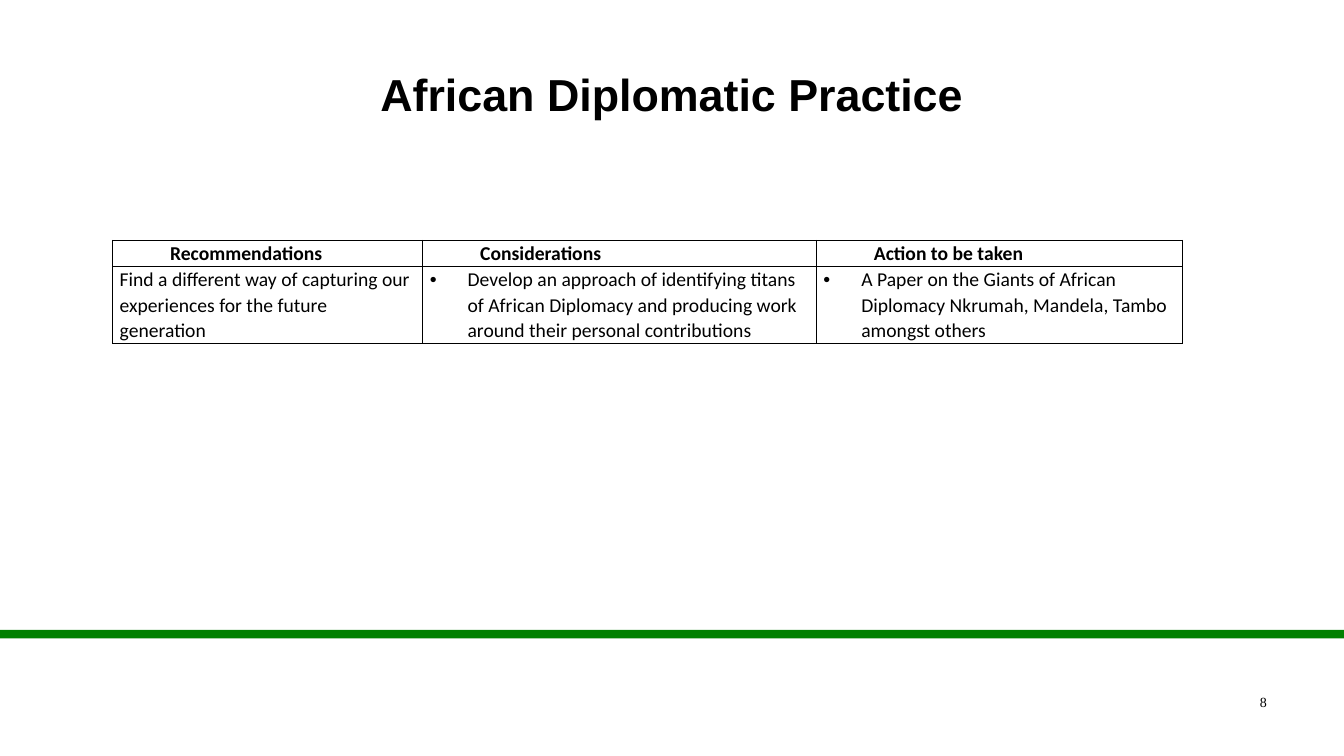
from lxml import etree
from pptx import Presentation
from pptx.dml.color import RGBColor
from pptx.enum import shapes, text
from pptx.oxml import ns
from pptx.util import Pt

TITLE = "African Diplomatic Practice"
PAGE_NUMBER = "8"
HEADERS = ["Recommendations", "Considerations", "Action to be taken"]
ACTIONS = [
    "Find a different way of capturing our experiences for the future generation",
    "Develop an approach of identifying titans of African Diplomacy and producing work "
    "around their personal contributions",
    "A Paper on the Giants of African Diplomacy Nkrumah, Mandela, Tambo amongst others",
]
COLORS = {"ink": "000000", "band": "008000"}
COLUMN_WIDTHS = [221.5, 281.25, 261.25]
ROW_HEIGHTS = [18.4, 55]
SLIDE_WIDTH, SLIDE_HEIGHT = 960, 540
BULLET_INDENT, HEADER_INDENT = 27, 40.5


def style(paragraph, font_name, size, bold=False):
    font = paragraph.font
    font.name, font.size, font.bold = font_name, Pt(size), bold
    font.color.rgb = RGBColor.from_string(COLORS["ink"])


def add_label(slide, box, words, alignment, anchor, font_name, size, bold=False):
    frame = slide.shapes.add_textbox(*map(Pt, box)).text_frame
    frame.word_wrap = True
    frame.vertical_anchor = anchor
    paragraph = frame.paragraphs[0]
    paragraph.text = words
    paragraph.alignment = alignment
    style(paragraph, font_name, size, bold)


def add_borders(cell):
    properties = cell._tc.get_or_add_tcPr()
    for side in ("lnL", "lnR", "lnT", "lnB"):
        line = etree.SubElement(properties, ns.qn(f"a:{side}"), w=str(Pt(1)))
        fill = etree.SubElement(line, ns.qn("a:solidFill"))
        etree.SubElement(fill, ns.qn("a:srgbClr"), val=COLORS["ink"])


def fill_cell(cell, words, is_header, has_bullet):
    add_borders(cell)
    cell.fill.background()
    cell.margin_left = cell.margin_right = Pt(5)
    cell.margin_top = cell.margin_bottom = 0
    paragraph = cell.text_frame.paragraphs[0]
    paragraph.text = words
    paragraph.line_spacing = 1.07
    properties = paragraph._p.get_or_add_pPr()
    if is_header:
        properties.set("marL", str(Pt(HEADER_INDENT - 5 + 0.5)))
    if has_bullet:
        properties.set("marL", str(Pt(BULLET_INDENT)))
        properties.set("indent", str(-Pt(BULLET_INDENT)))
        etree.SubElement(properties, ns.qn("a:buFont"), typeface="Arial")
        etree.SubElement(properties, ns.qn("a:buChar"), char="•")
    style(paragraph, "Calibri", 14, is_header)


def add_recommendations(slide):
    rows = [HEADERS, ACTIONS]
    frame = slide.shapes.add_table(
        len(rows), len(HEADERS), Pt(80.5), Pt(171.75),
        Pt(sum(COLUMN_WIDTHS)), Pt(sum(ROW_HEIGHTS)))
    table = frame.table
    table.first_row = table.horz_banding = False
    for column, width in zip(table.columns, COLUMN_WIDTHS):
        column.width = Pt(width)
    for row_index, (row, height) in enumerate(zip(rows, ROW_HEIGHTS)):
        table.rows[row_index].height = Pt(height)
        for column_index, words in enumerate(row):
            is_header = row_index == 0
            fill_cell(table.cell(row_index, column_index), words, is_header,
                      not is_header and column_index > 0)


def main():
    """Build the African Diplomatic Practice slide."""
    presentation = Presentation()
    presentation.slide_width = Pt(SLIDE_WIDTH)
    presentation.slide_height = Pt(SLIDE_HEIGHT)
    slide = presentation.slides.add_slide(presentation.slide_layouts[6])

    band = slide.shapes.add_shape(
        shapes.MSO_SHAPE.RECTANGLE, 0, Pt(450), Pt(SLIDE_WIDTH), Pt(6))
    band.shadow.inherit = False
    band.fill.solid()
    band.fill.fore_color.rgb = RGBColor.from_string(COLORS["band"])
    band.line.fill.background()

    add_label(slide, (48, 21.6, 864, 90), TITLE, text.PP_ALIGN.CENTER,
              text.MSO_ANCHOR.MIDDLE, "Arial", 32, True)
    add_recommendations(slide)
    add_label(slide, (688, 492, 224, 37.5), PAGE_NUMBER, text.PP_ALIGN.RIGHT,
              text.MSO_ANCHOR.TOP, "Times New Roman", 10)
    presentation.save("out.pptx")


if __name__ == "__main__":
    main()
